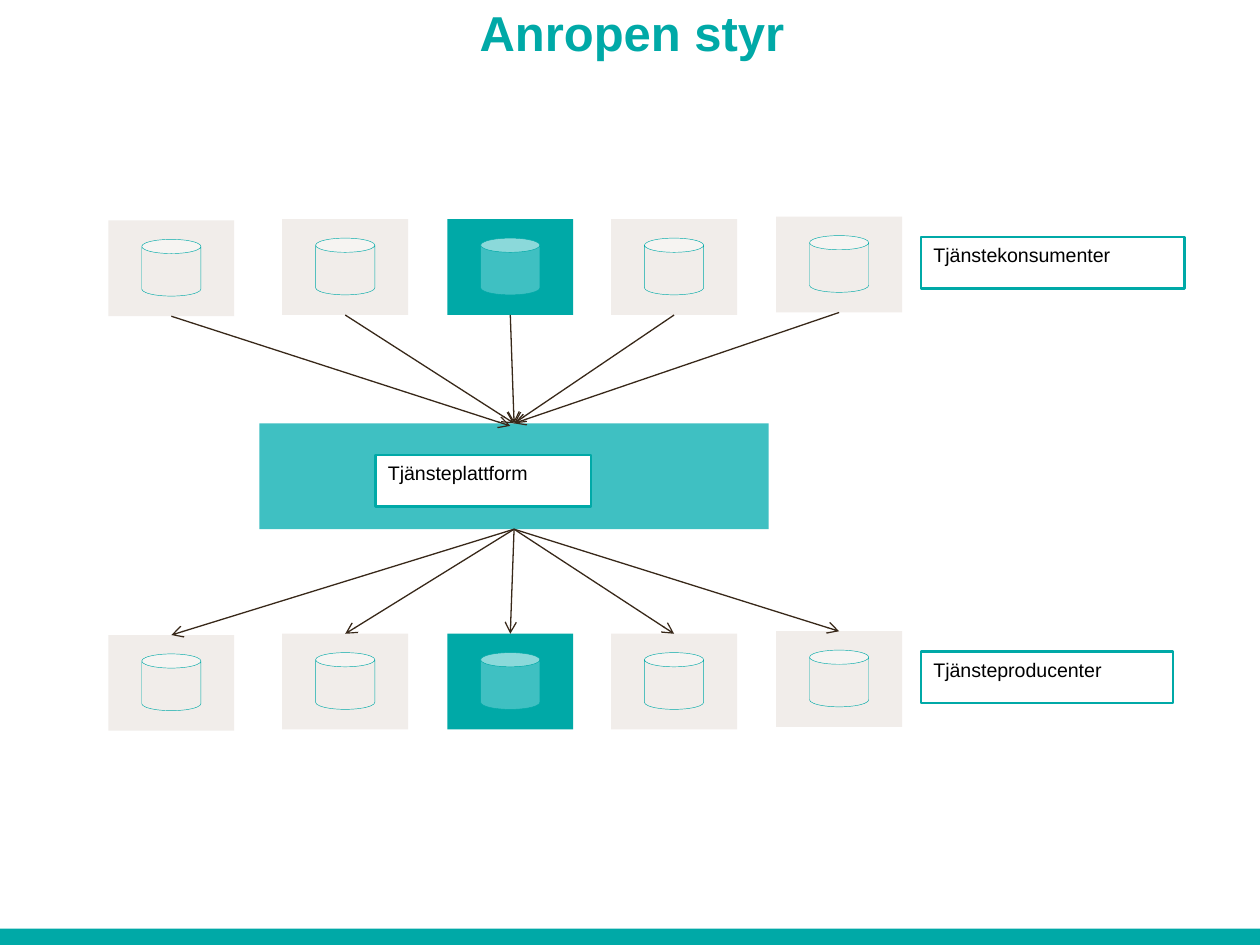
from typing import NamedTuple

from lxml import etree
from pptx import Presentation
from pptx.dml.color import RGBColor
from pptx.enum import shapes, text
from pptx.oxml import ns
from pptx.util import Inches, Pt

TEAL, LIGHT_TEAL, GREY = "00A9A7", "3FC0C2", "F1EDEA"
BROWN, WHITE, BLACK = "382819", "FFFFFF", "000000"
RECT, CAN = shapes.MSO_SHAPE.RECTANGLE, shapes.MSO_SHAPE.CAN

NODE_W, NODE_H = 1, 0.76
CAN_W, CAN_H = 0.47, 0.45
CONSUMER_TOP, PRODUCER_TOP = 1.74, 5.03
HUB_X, HUB_TOP, HUB_BOTTOM = 4.08, 3.36, 4.2


class Column(NamedTuple):
    left: float
    shift: float = 0
    box: str = GREY
    can: str = GREY
    hub_in: tuple = (HUB_X, HUB_TOP)

    @property
    def center(self) -> float:
        return self.left + NODE_W / 2


class Label(NamedTuple):
    caption: str
    left: float
    top: float
    width: float


COLUMNS = [
    Column(0.86, 0.01, hub_in=(4.05, 3.38)),
    Column(2.24),
    Column(3.55, box=TEAL, can=LIGHT_TEAL),
    Column(4.85),
    Column(6.16, -0.02),
]
LABELS = [
    Label("Tjänstekonsumenter", 7.31, 1.88, 2.09),
    Label("Tjänsteproducenter", 7.31, 5.17, 2),
    Label("Tjänsteplattform", 2.98, 3.61, 1.71),
]


def rgb(color: str) -> RGBColor:
    return RGBColor.from_string(color)


def add_shape(s, kind, left: float, top: float, width: float, height: float,
              fill: str, line_width: float = 0):
    """Add a filled shape, outlined in teal if a line width is given."""
    sp = s.shapes.add_shape(kind, Inches(left), Inches(top), Inches(width), Inches(height))
    sp.shadow.inherit = False
    sp.fill.solid()
    sp.fill.fore_color.rgb = rgb(fill)
    if line_width:
        sp.line.color.rgb = rgb(TEAL)
        sp.line.width = Pt(line_width)
    else:
        sp.line.fill.background()
    return sp


def add_node(s, column: Column, row_top: float) -> None:
    top = row_top + column.shift
    add_shape(s, RECT, column.left, top, NODE_W, NODE_H, column.box)
    add_shape(s, CAN, column.center - CAN_W / 2, top + 0.15, CAN_W, CAN_H, column.can, 0.25)


def add_arrow(s, start: tuple, end: tuple) -> None:
    line = s.shapes.add_connector(shapes.MSO_CONNECTOR.STRAIGHT,
                                  *(Inches(v) for v in (*start, *end)))
    line.line.color.rgb = rgb(BROWN)
    line.line.width = Pt(0.75)
    etree.SubElement(line.line._get_or_add_ln(), ns.qn("a:tailEnd"), type="arrow")
    etree.SubElement(line._element.spPr, ns.qn("a:effectLst"))


def write(sp, caption: str, size: float, color: str, align, bold: bool = False) -> None:
    tf = sp.text_frame
    tf.text = caption
    tf.word_wrap = True
    tf.auto_size = text.MSO_AUTO_SIZE.NONE
    tf.vertical_anchor = text.MSO_ANCHOR.TOP
    p = tf.paragraphs[0]
    p.alignment = align
    font = p.runs[0].font
    font.name, font.size, font.bold = "Arial", Pt(size), bold
    font.color.rgb = rgb(color)


def add_label(s, label: Label) -> None:
    sp = add_shape(s, RECT, label.left, label.top, label.width, 0.41, WHITE, 1.5)
    write(sp, label.caption, 11.2, BLACK, text.PP_ALIGN.LEFT)


def set_title(s, caption: str) -> None:
    title = s.shapes.title
    title.left, title.top = Inches(0.44), Inches(-0.06)
    title.width, title.height = Inches(9.15), Inches(0.75)
    write(title, caption, 28, TEAL, text.PP_ALIGN.CENTER, bold=True)
    title.text_frame.margin_top = Inches(0.08)


def main() -> None:
    prs = Presentation()
    prs.slide_width, prs.slide_height = Inches(10), Inches(7.5)
    s = prs.slides.add_slide(prs.slide_layouts[5])

    set_title(s, "Anropen styr")
    add_shape(s, RECT, 0, 7.37, 10, 0.13, TEAL)
    add_shape(s, RECT, 2.06, HUB_TOP, 4.04, HUB_BOTTOM - HUB_TOP, LIGHT_TEAL)
    for row_top in (CONSUMER_TOP, PRODUCER_TOP):
        for column in COLUMNS:
            add_node(s, column, row_top)
    for column in COLUMNS:
        bottom = CONSUMER_TOP + column.shift + NODE_H
        add_arrow(s, (column.center, bottom), column.hub_in)
        add_arrow(s, (HUB_X, HUB_BOTTOM), (column.center, PRODUCER_TOP + column.shift))
    for label in LABELS:
        add_label(s, label)
    prs.save("out.pptx")


if __name__ == "__main__":
    main()
